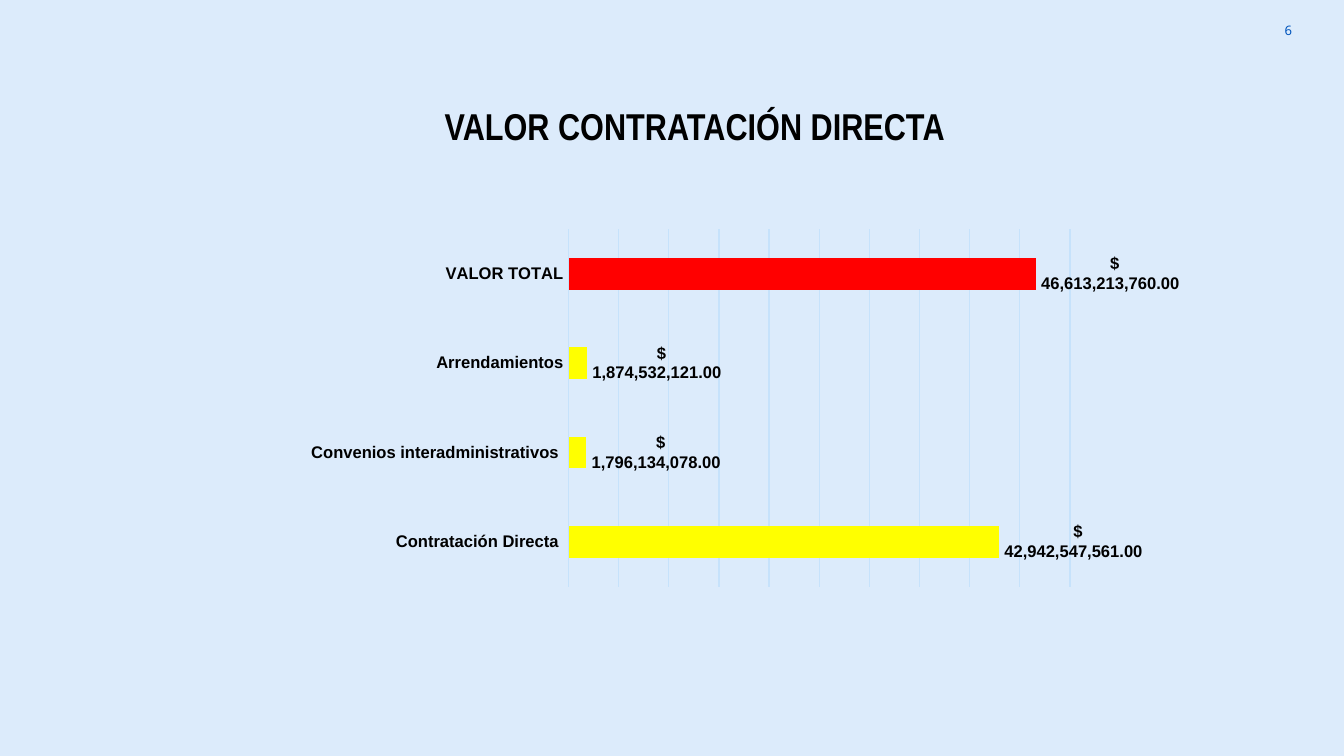
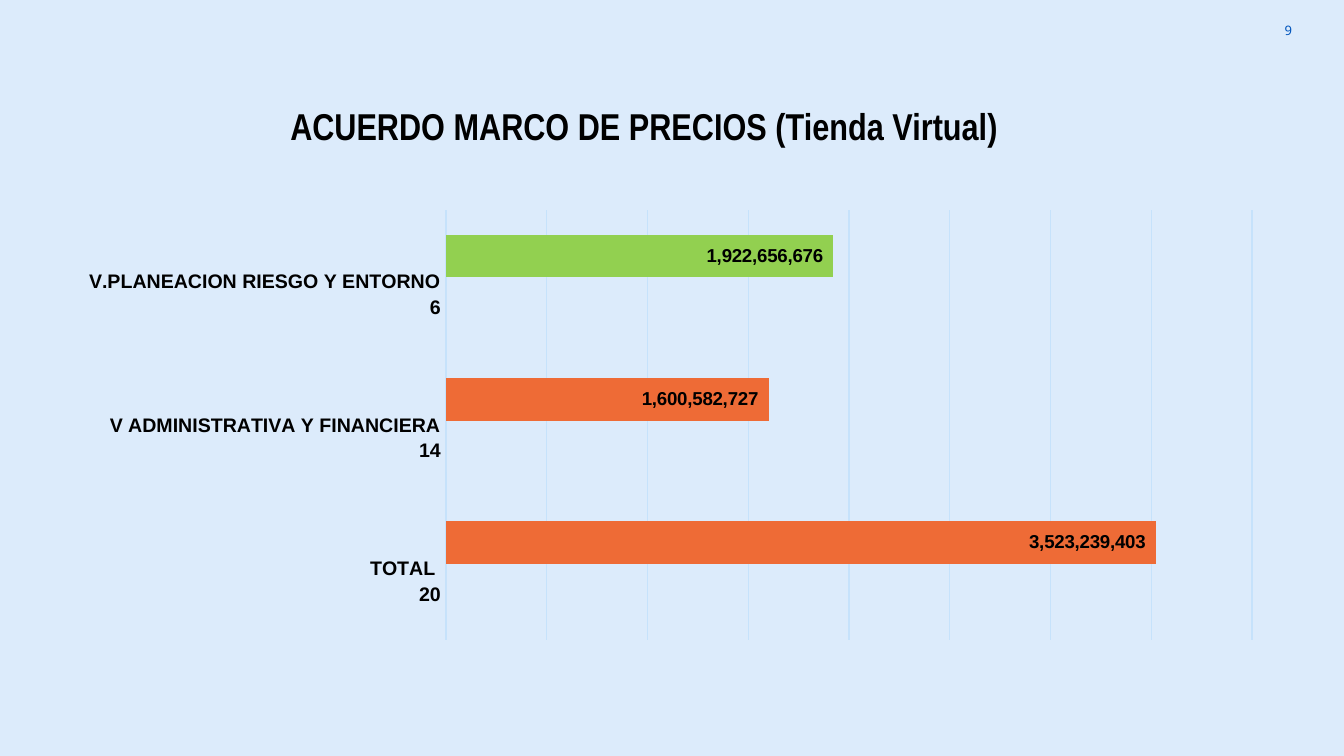
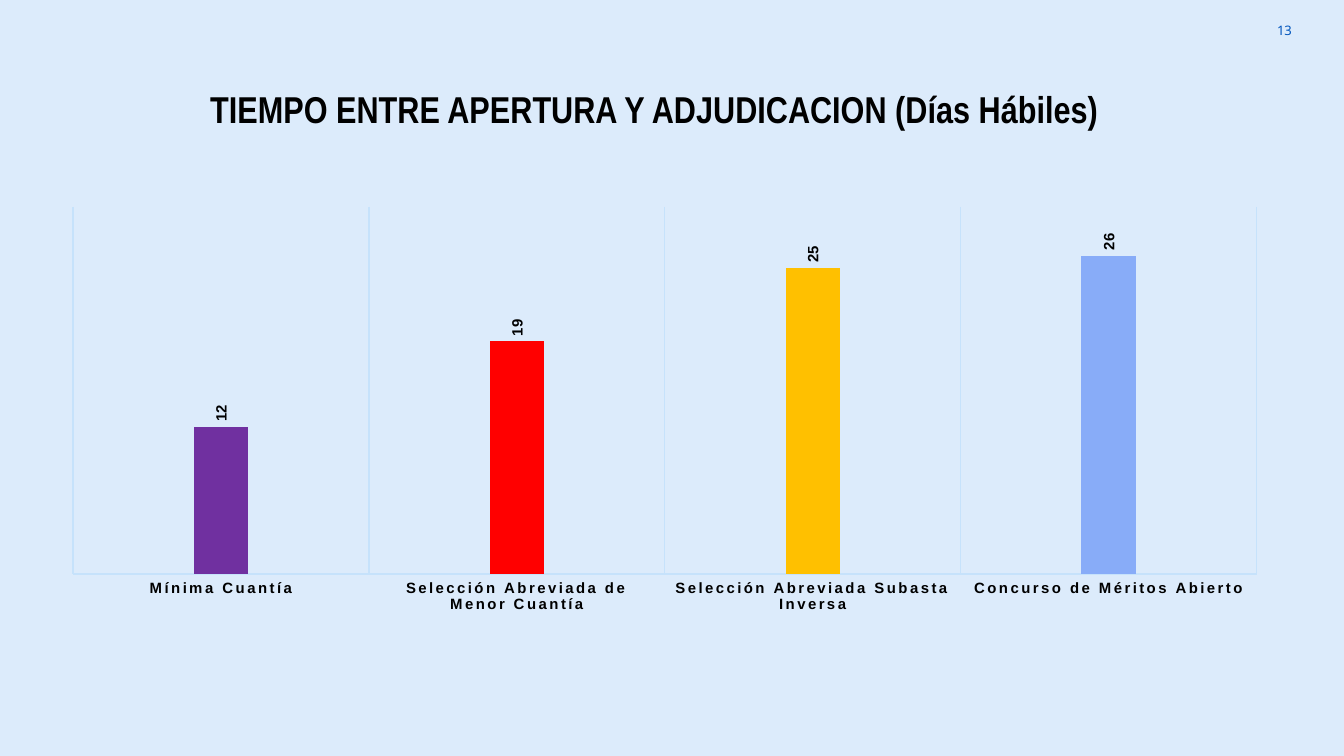
from dataclasses import dataclass

from lxml.etree import SubElement
from pptx import Presentation
from pptx.chart.data import CategoryChartData
from pptx.dml.color import RGBColor
from pptx.enum.chart import XL_CHART_TYPE, XL_LABEL_POSITION, XL_TICK_MARK
from pptx.enum.text import MSO_ANCHOR, MSO_AUTO_SIZE, PP_ALIGN
from pptx.oxml.ns import qn
from pptx.util import Pt


@dataclass(frozen=True)
class Theme:
    """Colours, fonts and type sizes shared by every slide."""

    background: str = "DCEBFB"
    ink: str = "000000"
    chart_ink: str = "073763"
    number_ink: str = "0054BC"
    grid: str = "C6E2FB"
    title_font: str = "Arial Narrow"
    chart_font: str = "Arial"
    number_font: str = "Noto Sans"
    title_size: float = 20
    chart_size: float = 10
    number_size: float = 7
    line_width: float = 0.75


THEME = Theme()
NUMBER_BOX = (656, 0.7, 43.2, 31)
PESOS = r'_("$"\ * #,##0.00_);_("$"\ * \(#,##0.00\);_("$"\ * "-"??_);_(@_)'
WHOLE = r'_(* #,##0_);_(* \(#,##0\);_(* "-"_);_(@_)'

SLIDES = [
    {
        "number": "6",
        "title": "VALOR CONTRATACIÓN DIRECTA",
        "title_box": (231, 51.6, 290, 31.5),
        "align": PP_ALIGN.LEFT,
        "chart": {
            "box": (151.9, 108, 482.4, 234),
            "kind": XL_CHART_TYPE.BAR_CLUSTERED,
            "plot": (154.9, 14.8, 272.6, 191.6),
            "categories": ["Contratación Directa ", "Convenios interadministrativos ",
                           "Arrendamientos", "VALOR TOTAL"],
            "axis_size": 9, "gap": 182, "overlap": 0,
            "maximum": 50_000_000_000, "step": 5_000_000_000,
            "series": [
                {"name": "Series 1",
                 "values": [42942547561, 1796134078, 1874532121, 46613213760],
                 "color": "FFFF00", "points": {3: "FF0000"},
                 "format": PESOS, "size": 9, "position": XL_LABEL_POSITION.OUTSIDE_END},
            ],
        },
    },
    {
        "number": "9",
        "title": "ACUERDO MARCO DE PRECIOS (Tienda Virtual)",
        "title_box": (148.3, 51.6, 417, 31.5),
        "align": PP_ALIGN.LEFT,
        "chart": {
            "box": (34.6, 108, 649.4, 239.8),
            "kind": XL_CHART_TYPE.BAR_CLUSTERED,
            "plot": (204.4, 4.6, 431.8, 230.3),
            "categories": ["TOTAL ", "V ADMINISTRATIVA Y FINANCIERA",
                           "V.PLANEACION RIESGO Y ENTORNO"],
            "axis_size": 10.5, "gap": 115, "overlap": -20,
            "maximum": 4_000_000_000, "step": 500_000_000,
            "series": [
                {"name": "Series 1", "values": [20, 14, 6], "color": "D9E4FA",
                 "format": "General", "size": 10.5,
                 "position": XL_LABEL_POSITION.INSIDE_END},
                {"name": "Series 2", "values": [3523239403, 1600582727, 1922656676],
                 "color": "A9C6FF", "points": {0: "EE6B36", 1: "EE6B36", 2: "92D050"},
                 "format": WHOLE, "size": 10, "position": XL_LABEL_POSITION.INSIDE_END},
            ],
        },
    },
    {
        "number": "13",
        "title": "TIEMPO ENTRE APERTURA Y ADJUDICACION (Días Hábiles)",
        "title_box": (102.2, 42.5, 496.8, 31.5),
        "align": PP_ALIGN.CENTER,
        "chart": {
            "box": (26, 106.5, 660, 226.8),
            "kind": XL_CHART_TYPE.COLUMN_CLUSTERED,
            "plot": (13.2, 4.4, 634, 196.6),
            "categories": ["Mínima Cuantía", "Selección Abreviada de Menor Cuantía",
                           "Selección Abreviada Subasta Inversa",
                           "Concurso de Méritos Abierto"],
            "axis_size": 8, "gap": 444, "overlap": -90,
            "maximum": 30, "step": 5, "spacing": 120, "upright": True,
            "series": [
                {"name": name, "values": values, "color": color, "points": points,
                 "format": "0", "size": 8, "position": XL_LABEL_POSITION.OUTSIDE_END}
                for name, values, color, points in (
                    ("Series 1", [], "E4EDFE", {}),
                    ("Series 2", [], "B7CFFF", {}),
                    ("Series 3", [12, 19, 25, 26], "88ACF8",
                     {0: "7030A0", 1: "FF0000", 2: "FFC000"}),
                )
            ],
        },
    },
]


def apply(target, values):
    """Set each named attribute of the target."""
    for name, value in values.items():
        setattr(target, name, value)


def paint(fill, color):
    """Make a fill solid in one colour."""
    fill.solid()
    fill.fore_color.rgb = RGBColor.from_string(color)


def style_font(font, name, size, color, bold=False):
    """Give a font its face, size, weight and colour."""
    apply(font, {"name": name, "size": Pt(size), "bold": bold})
    font.color.rgb = RGBColor.from_string(color)


def style_line(line):
    """Draw an axis or grid line in the shared pale blue."""
    line.color.rgb = RGBColor.from_string(THEME.grid)
    line.width = Pt(THEME.line_width)


def place(shape, box):
    """Move a shape to a box given in points."""
    apply(shape, dict(zip(("left", "top", "width", "height"), map(Pt, box))))


def write(shape, text, align, **font):
    """Fill a shape with one formatted paragraph."""
    para = shape.text_frame.paragraphs[0]
    para.alignment = align
    span = para.add_run()
    span.text = text
    style_font(span.font, **font)


def add_title(page, text, box, align):
    """Place the slide title in its placeholder."""
    title = page.shapes.title
    place(title, box)
    apply(title.text_frame, {"word_wrap": False, "vertical_anchor": MSO_ANCHOR.TOP,
                             "auto_size": MSO_AUTO_SIZE.SHAPE_TO_FIT_TEXT})
    write(title, text, align, name=THEME.title_font, size=THEME.title_size,
          color=THEME.ink, bold=True)


def add_number(page, text, box):
    """Place the page number in the top right corner."""
    number = page.shapes.add_textbox(*map(Pt, box))
    margins = dict.fromkeys(
        ("margin_left", "margin_top", "margin_right", "margin_bottom"), Pt(7.2))
    apply(number.text_frame, {"word_wrap": True, "vertical_anchor": MSO_ANCHOR.MIDDLE,
                              **margins})
    write(number, text, PP_ALIGN.RIGHT, name=THEME.number_font,
          size=THEME.number_size, color=THEME.number_ink)


def set_plot_layout(chart, plot, box):
    """Fix the inner plot area, given in points within the chart box."""
    area = chart._chartSpace.chart.plotArea
    for old in area.findall(qn("c:layout")):
        area.remove(old)
    layout = SubElement(area, qn("c:layout"))
    area.insert(0, layout)
    manual = SubElement(layout, qn("c:manualLayout"))
    width, height = box[2:]
    fractions = (part / whole for part, whole in zip(plot, (width, height) * 2))
    settings = {"layoutTarget": "inner", "xMode": "edge", "yMode": "edge",
                **dict(zip("xywh", fractions))}
    for tag, value in settings.items():
        SubElement(manual, qn(f"c:{tag}")).set("val", str(value))


def style_axes(chart, data):
    """Format the category axis and hide the value axis."""
    category, value = chart.category_axis, chart.value_axis
    upright = data.get("upright", False)
    category.major_tick_mark = XL_TICK_MARK.NONE
    category.has_major_gridlines = upright
    font = category.tick_labels.font
    style_font(font, THEME.chart_font, data["axis_size"], THEME.ink, True)
    if "spacing" in data:
        font._rPr.set("spc", str(data["spacing"]))
    style_line(category.format.line)
    apply(value, {"visible": False, "has_major_gridlines": not upright,
                  "minimum_scale": 0, "maximum_scale": data["maximum"],
                  "major_unit": data["step"]})
    style_line((category if upright else value).major_gridlines.format.line)


def style_series(series, data, upright):
    """Colour the bars of a series and label them."""
    series.invert_if_negative = False
    paint(series.format.fill, data["color"])
    for index, color in data.get("points", {}).items():
        paint(series.points[index].format.fill, color)
    labels = series.data_labels
    style_font(labels.font, THEME.chart_font, data["size"], THEME.ink, True)
    apply(labels, {"show_value": True, "number_format": data["format"],
                   "number_format_is_linked": False, "position": data["position"]})
    if upright:
        body = labels._element.find(f"{qn('c:txPr')}/{qn('a:bodyPr')}")
        body.set("rot", "-5400000")
        body.set("vert", "horz")


def add_bars(page, data):
    """Add a bar or column chart in its box."""
    chart_data = CategoryChartData()
    chart_data.categories = data["categories"]
    for item in data["series"]:
        chart_data.add_series(item["name"], item["values"])
    chart = page.shapes.add_chart(data["kind"], *map(Pt, data["box"]), chart_data).chart
    apply(chart, {"has_legend": False, "has_title": False})
    style_font(chart.font, THEME.chart_font, THEME.chart_size, THEME.chart_ink)
    apply(chart.plots[0], {"gap_width": data["gap"], "overlap": data["overlap"],
                           "vary_by_categories": False})
    set_plot_layout(chart, data["plot"], data["box"])
    style_axes(chart, data)
    for series, item in zip(chart.plots[0].series, data["series"]):
        style_series(series, item, data.get("upright", False))


def add_chart_slide(deck, content):
    """Add a slide with a page number, a title and one chart."""
    page = deck.slides.add_slide(deck.slide_layouts[5])
    add_number(page, content["number"], NUMBER_BOX)
    add_title(page, content["title"], content["title_box"], content["align"])
    add_bars(page, content["chart"])


def main():
    """Build and save the deck."""
    deck = Presentation()
    apply(deck, {"slide_width": Pt(720), "slide_height": Pt(405)})
    paint(deck.slide_master.background.fill, THEME.background)
    for content in SLIDES:
        add_chart_slide(deck, content)
    deck.save("out.pptx")


if __name__ == "__main__":
    main()
